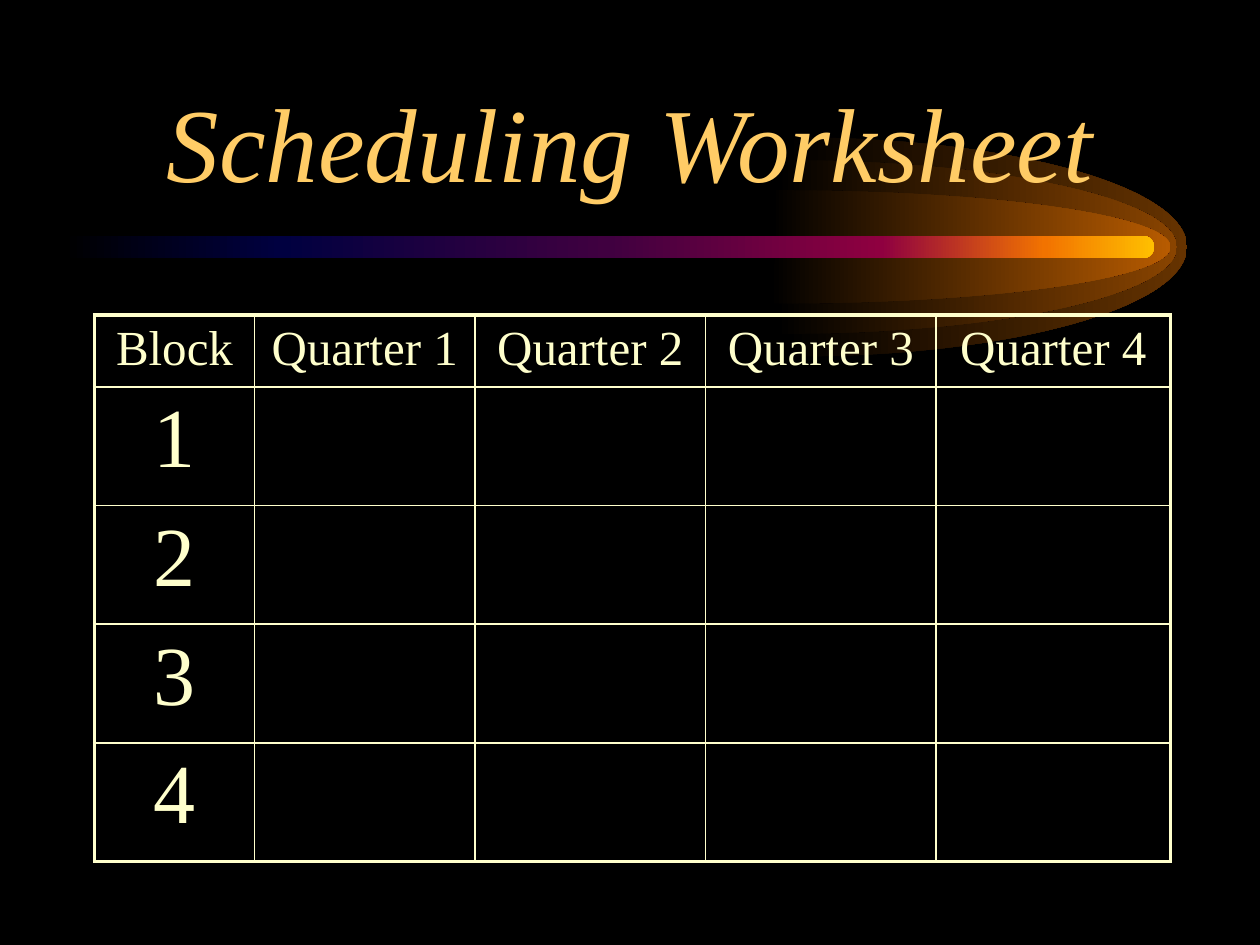
"""Build the scheduling worksheet slide with a comet rule above an empty grid."""
import pptx
import pptx.dml.color
import pptx.enum.shapes
import pptx.enum.text
import pptx.util
from lxml import etree
from pptx.oxml.ns import qn

WIDE, HIGH = 10, 7.5
TITLE = "Scheduling Worksheet"
HEADS = ["Block", "Quarter 1", "Quarter 2", "Quarter 3", "Quarter 4"]
BLOCKS = ["1", "2", "3", "4"]
COLS = [1.27, 1.75, 1.83, 1.83, 1.86]
DEPTH, HEAD = 4.34, 0.57
ROWS = [HEAD] + [(DEPTH - HEAD) / len(BLOCKS)] * len(BLOCKS)
FONT, GOLD, CREAM, BLACK = "Times New Roman", "FFCC66", "FFFFCC", "000000"
AXIS, REACH, LIP, BEND = 1.96, 3.13, 0.05, 0.55
GLOWS = [(6.29, 0.87, "663300"), (6.21, 0.69, "894400"), (6.16, 0.45, "B75B00")]
TAIL = [(0, BLACK), (20, "000040"), (50, "400040"),
        (75, "8F0040"), (90, "F27300"), (100, "FFBF00")]
THICK, THIN = 2.25, 1

inch = pptx.util.Inches


def color(code):
    return pptx.dml.color.RGBColor.from_string(code)


def blend(shape, stops):
    shape.shadow.inherit = False
    shape.line.fill.background()
    shape.fill.gradient()
    shape.fill.gradient_angle = 0
    track = next(shape._element.iter(qn("a:gsLst")))
    track.clear()
    for share, code in stops:
        stop = etree.SubElement(track, qn("a:gs"), pos=str(share * 1000))
        etree.SubElement(stop, qn("a:srgbClr"), val=code)


def curve(edge, pulls):
    edge.tag = qn("a:cubicBezTo")
    for spot, (x, y) in enumerate(pulls):
        edge.insert(spot, etree.Element(qn("a:pt"), x=str(inch(x)), y=str(inch(y))))


def glow(slide, left, rise, code):
    corners = [(left, AXIS - rise), (left + REACH, AXIS), (left, AXIS + rise),
               (left - LIP, AXIS + rise), (left, AXIS)]
    points = [(inch(x), inch(y)) for x, y in corners]
    pen = slide.shapes.build_freeform(*points[0])
    pen.add_line_segments(points[1:], close=True)
    shape = pen.convert_to_shape()
    edges = list(shape._element.iter(qn("a:lnTo")))
    near, far = LIP + REACH * BEND, LIP + REACH
    up, down = rise * (1 - BEND), rise * (1 + BEND)
    curve(edges[0], [(near, 0), (far, up)])
    curve(edges[1], [(far, down), (near, 2 * rise)])
    blend(shape, [(0, BLACK), (100, code)])


def style(para, size, code):
    para.alignment = pptx.enum.text.PP_ALIGN.CENTER
    para.font.name, para.font.size = FONT, pptx.util.Pt(size)
    para.font.color.rgb = color(code)


def space(para, share):
    gap = etree.Element(qn("a:spcBef"))
    etree.SubElement(gap, qn("a:spcPct"), val=str(share * 1000))
    para._p.get_or_add_pPr().insert(0, gap)


def border(cell, widths):
    props = cell._tc.get_or_add_tcPr()
    for spot, (side, width) in enumerate(widths.items()):
        line = etree.Element(qn("a:ln" + side), w=str(pptx.util.Pt(width)))
        fill = etree.SubElement(line, qn("a:solidFill"))
        etree.SubElement(fill, qn("a:srgbClr"), val=CREAM)
        props.insert(spot, line)


def grid(slide):
    high, wide = len(ROWS), len(COLS)
    table = slide.shapes.add_table(
        high, wide, inch(0.75), inch(2.5), inch(sum(COLS)), inch(DEPTH)).table
    table.first_row = table.horz_banding = False
    for col, width in zip(table.columns, COLS):
        col.width = inch(width)
    for row, height in zip(table.rows, ROWS):
        row.height = inch(height)
    texts = [HEADS] + [[block] + [""] * (wide - 1) for block in BLOCKS]
    for r, line in enumerate(texts):
        for c, text in enumerate(line):
            cell = table.cell(r, c)
            cell.fill.background()
            edges = {"L": c == 0, "R": c == wide - 1, "T": r == 0, "B": r == high - 1}
            border(cell, {side: THICK if outer else THIN for side, outer in edges.items()})
            if text:
                cell.text = text
                para = cell.text_frame.paragraphs[0]
                style(para, 48 if r else 28, CREAM)
                space(para, 20)


def main():
    deck = pptx.Presentation()
    deck.slide_width, deck.slide_height = inch(WIDE), inch(HIGH)
    slide = deck.slides.add_slide(deck.slide_layouts[5])
    slide.background.fill.solid()
    slide.background.fill.fore_color.rgb = color(BLACK)

    for left, rise, code in GLOWS:
        glow(slide, left, rise, code)
    comet = slide.shapes.add_shape(
        pptx.enum.shapes.MSO_SHAPE.ROUNDED_RECTANGLE,
        inch(0.5), inch(1.87), inch(8.66), inch(0.18))
    comet.adjustments[0] = 0.5
    blend(comet, TAIL)

    title = slide.shapes.title
    title.left, title.top = inch(0.75), inch(HIGH / 18)
    title.width, title.height = inch(8.5), inch(HIGH / 6)
    title.text = TITLE
    frame = title.text_frame
    frame.auto_size = pptx.enum.text.MSO_AUTO_SIZE.NONE
    frame.vertical_anchor = pptx.enum.text.MSO_ANCHOR.BOTTOM
    style(frame.paragraphs[0], 60, GOLD)
    frame.paragraphs[0].font.italic = True
    slide.shapes._spTree.append(title._element)

    grid(slide)
    deck.save("out.pptx")


if __name__ == "__main__":
    main()
